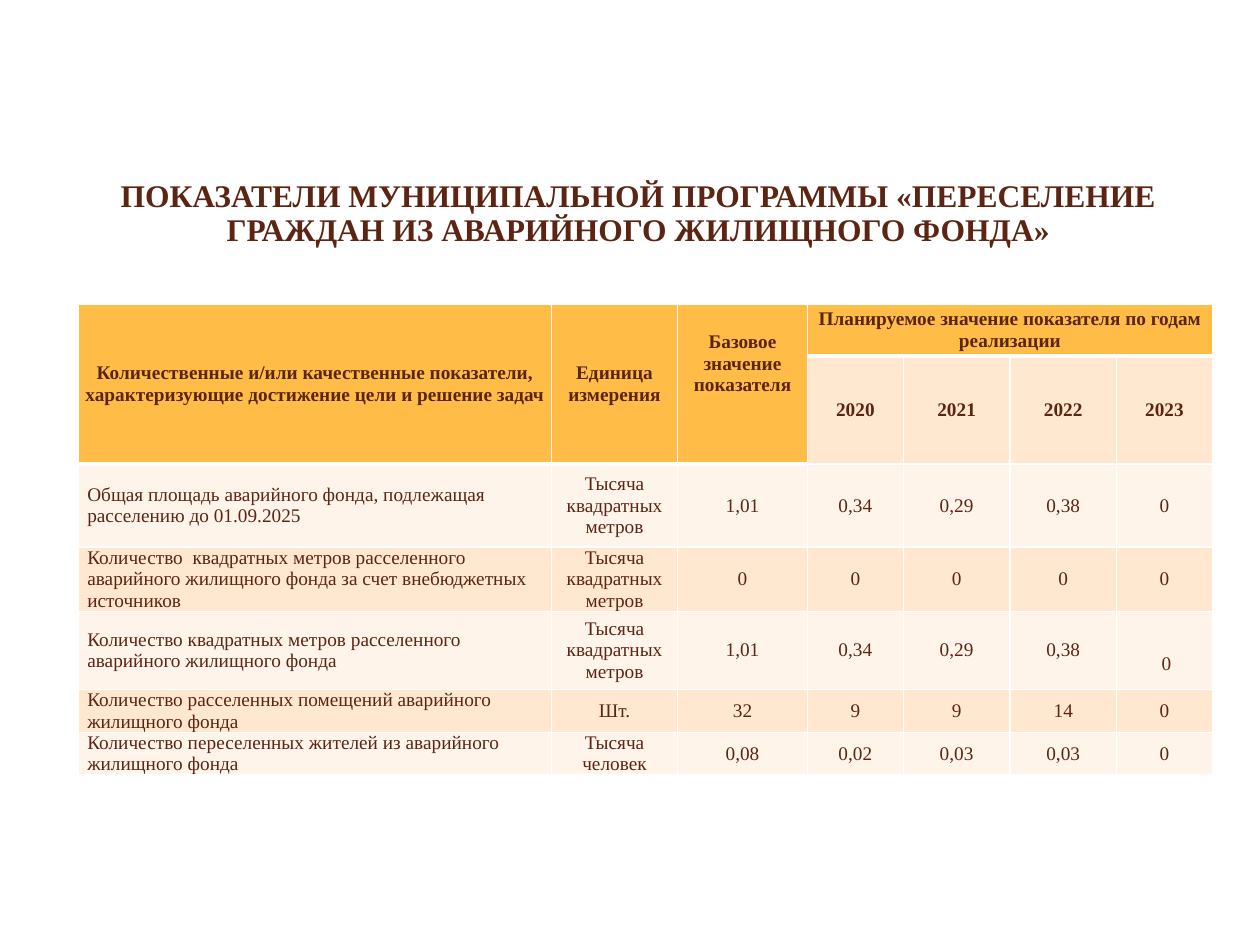
from pptx import Presentation
from pptx.dml.color import RGBColor
from pptx.enum.text import MSO_ANCHOR, PP_ALIGN
from pptx.oxml import parse_xml
from pptx.oxml.ns import nsdecls
from pptx.util import Cm, Pt

BROWN = RGBColor(0x5B, 0x24, 0x13)
AMBER = RGBColor(0xFF, 0xBD, 0x47)
PEACH = RGBColor(0xFF, 0xE8, 0xCF)
CREAM = RGBColor(0xFF, 0xF4, 0xE9)
WHITE = RGBColor(0xFF, 0xFF, 0xFF)

TITLE = ("ПОКАЗАТЕЛИ МУНИЦИПАЛЬНОЙ ПРОГРАММЫ «ПЕРЕСЕЛЕНИЕ "
         "ГРАЖДАН ИЗ АВАРИЙНОГО ЖИЛИЩНОГО ФОНДА»")
AREA = "Тысяча квадратных метров"
ROWS = [
    ["Количественные и/или качественные показатели, характеризующие достижение цели и решение задач",
     "Единица измерения", "Базовое значение показателя",
     "Планируемое значение показателя по годам реализации", "", "", ""],
    ["", "", "", "2020", "2021", "2022", "2023"],
    ["Общая площадь аварийного фонда, подлежащая расселению до 01.09.2025",
     AREA, "1,01", "0,34", "0,29", "0,38", "0"],
    ["Количество  квадратных метров расселенного аварийного жилищного фонда "
     "за счет внебюджетных источников", AREA, "0", "0", "0", "0", "0"],
    ["Количество квадратных метров расселенного аварийного жилищного фонда",
     AREA, "1,01", "0,34", "0,29", "0,38", "0"],
    ["Количество расселенных помещений аварийного жилищного фонда",
     "Шт.", "32", "9", "9", "14", "0"],
    ["Количество переселенных жителей из аварийного жилищного фонда",
     "Тысяча человек", "0,08", "0,02", "0,03", "0,03", "0"],
]
WIDTHS = [9.54, 2.54, 2.62, 1.93, 2.15, 2.15, 1.93]
HEIGHTS = [1.05, 2.17, 1.67, 1.3, 1.57, 0.86, 0.86]
MERGES = [((0, c), (1, c)) for c in range(3)] + [((0, 3), (0, 6))]
HEADER_ROWS, TALL_COLS = 2, 3


def write(tf, text, size=11, bold=False, align=PP_ALIGN.CENTER, spacing=None):
    """Put one formatted paragraph into a text frame."""
    tf.word_wrap = True
    p = tf.paragraphs[0]
    p.alignment = align
    p.line_spacing = spacing
    r = p.add_run()
    r.text = text
    r.font.name = "Times New Roman"
    r.font.size = Pt(size)
    r.font.bold = bold
    r.font.color.rgb = BROWN


def set_margins(cell, left, top, right, bottom):
    """Set the four cell margins in centimetres."""
    cell.margin_left, cell.margin_top = Cm(left), Cm(top)
    cell.margin_right, cell.margin_bottom = Cm(right), Cm(bottom)


def set_borders(cell, top, bottom):
    """Draw white borders, with top and bottom widths in points."""
    tc_pr = cell._tc.get_or_add_tcPr()
    for side, width in (("L", 1), ("R", 1), ("T", top), ("B", bottom)):
        tc_pr.append(parse_xml(
            f'<a:ln{side} {nsdecls("a")} w="{Pt(width)}"><a:solidFill>'
            f'<a:srgbClr val="{WHITE}"/></a:solidFill></a:ln{side}>'))


class Deck:
    """Holds the slide and draws its elements in one style."""

    def __init__(self, prs):
        self.s = prs.slides.add_slide(prs.slide_layouts[6])

    def title(self, text, left, top, width, height):
        """Add the centred heading."""
        sp = self.s.shapes.add_textbox(Cm(left), Cm(top), Cm(width), Cm(height))
        tf = sp.text_frame
        tf.vertical_anchor = MSO_ANCHOR.MIDDLE
        write(tf, text, size=18, bold=True, spacing=0.9)

    def table(self, rows, left, top):
        """Add the indicator table with its merged header."""
        table = self.s.shapes.add_table(
            len(rows), len(WIDTHS), Cm(left), Cm(top),
            Cm(sum(WIDTHS)), Cm(sum(HEIGHTS))).table
        for column, width in zip(table.columns, WIDTHS):
            column.width = Cm(width)
        for row, height in zip(table.rows, HEIGHTS):
            row.height = Cm(height)
        for start, end in MERGES:
            table.cell(*start).merge(table.cell(*end))
        for i, values in enumerate(rows):
            for j, text in enumerate(values):
                self.cell(table.cell(i, j), text, i, j)
        set_margins(table.cell(0, 2), 0.03, 0.03, 0.03, 0.85)
        set_margins(table.cell(4, 6), 0.18, 0.55, 0.1, 0)

    def cell(self, cell, text, i, j):
        """Style and fill one table cell."""
        header = i < HEADER_ROWS
        last_amber = 1 if j < TALL_COLS else 0
        set_borders(cell, top=3 if i == last_amber + 1 else 1,
                    bottom=3 if i <= last_amber else 1)
        cell.fill.solid()
        cell.fill.fore_color.rgb = (AMBER if i <= last_amber else
                                    PEACH if i % 2 else CREAM)
        cell.vertical_anchor = MSO_ANCHOR.MIDDLE
        side = 0.03 if header else 0.18 if j == 0 else 0.1
        set_margins(cell, side, 0, side, 0)
        if text:
            left = j == 0 and not header
            write(cell.text_frame, text, bold=header,
                  align=PP_ALIGN.LEFT if left else PP_ALIGN.CENTER)


def main():
    """Build and save the slide."""
    prs = Presentation()
    prs.slide_width, prs.slide_height = Cm(25.4), Cm(19.05)
    deck = Deck(prs)
    deck.table(ROWS, 1.58, 6.13)
    deck.title(TITLE, 1.3, 3.33, 23.14, 2)
    prs.save("out.pptx")


if __name__ == "__main__":
    main()
